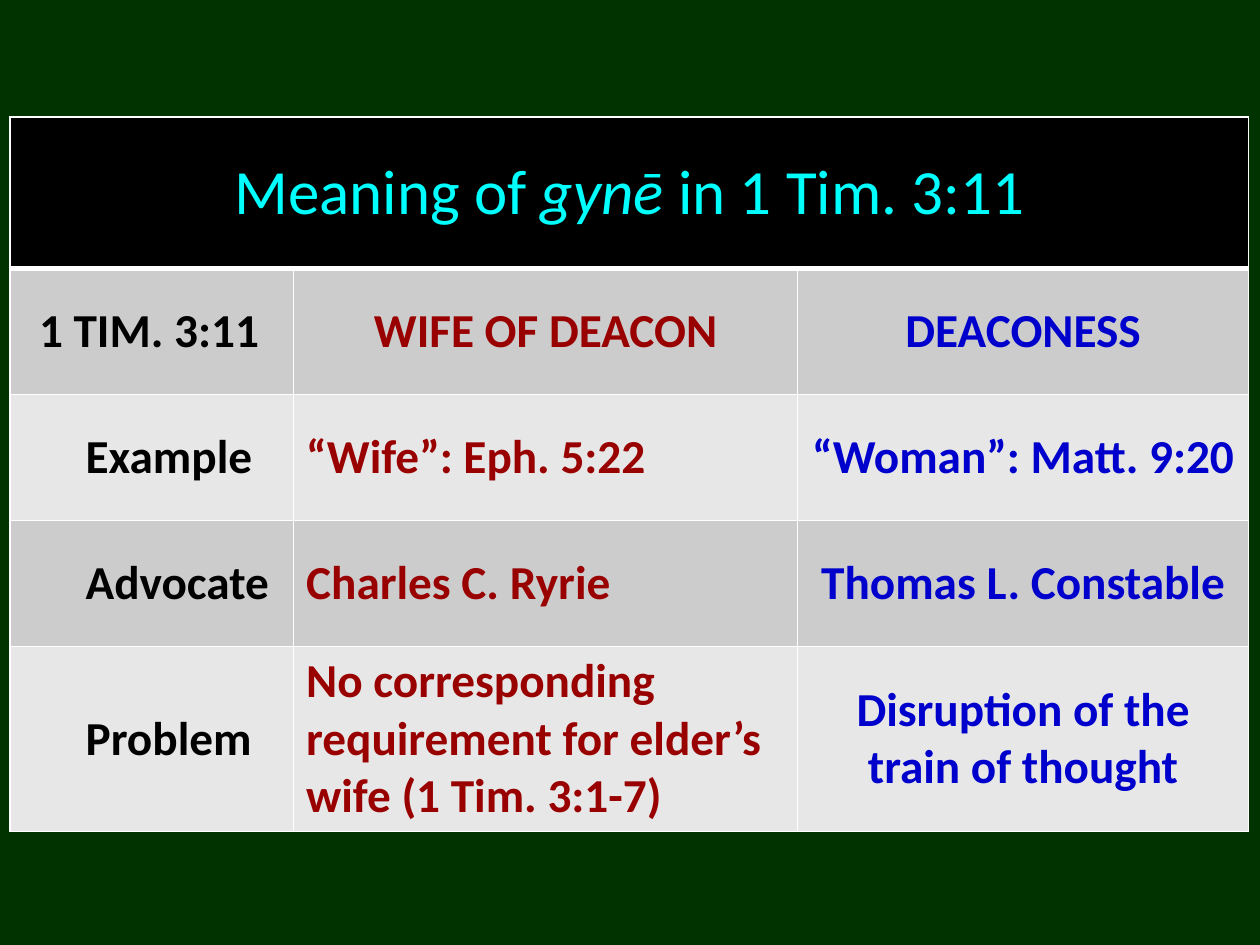
import pptx
import pptx.util
import pptx.dml.color
import pptx.enum.text
import pptx.oxml
import pptx.oxml.ns
from dataclasses import dataclass

Inches = pptx.util.Inches
Pt = pptx.util.Pt
PP_ALIGN = pptx.enum.text.PP_ALIGN


@dataclass(frozen=True)
class Theme:
    font: str = "Calibri"
    title_size: int = 36
    body_size: int = 27
    background: str = "003300"
    title_fill: str = "000000"
    title_text: str = "00FFFF"
    bands: tuple = ("CCCCCC", "E7E7E7")
    columns: tuple = ("000000", "990000", "0000CC")
    border: str = "FFFFFF"
    thin: int = 1
    thick: int = 3


THEME = Theme()
TITLE = (("Meaning of ", False), ("gynē", True), (" in 1 Tim. 3:11", False))
ROWS = (
    ("1 TIM. 3:11", "WIFE OF DEACON", "DEACONESS"),
    ("Example", "“Wife”: Eph. 5:22", "“Woman”: Matt. 9:20"),
    ("Advocate", "Charles C. Ryrie", "Thomas L. Constable"),
    ("Problem", "No corresponding requirement for elder’s wife (1 Tim. 3:1-7)",
     "Disruption of the train of thought"),
)
COLUMN_WIDTHS = (2.25, 4, 3.58)
TITLE_HEIGHT = 1.2
HEADING_INDENT, LABEL_INDENT = 0.13, 0.5


def rgb(value):
    return pptx.dml.color.RGBColor.from_string(value)


def style_run(r, size, color, bold=False, italic=False):
    r.font.name = THEME.font
    r.font.size = Pt(size)
    r.font.color.rgb = rgb(color)
    r.font.bold = bold
    r.font.italic = italic


def style_cell(cell, fill, top, bottom):
    cell.vertical_anchor = pptx.enum.text.MSO_ANCHOR.MIDDLE
    cell.fill.solid()
    cell.fill.fore_color.rgb = rgb(fill)
    tc_pr = cell._tc.get_or_add_tcPr()
    edges = (("L", THEME.thin), ("R", THEME.thin), ("T", top), ("B", bottom))
    for i, (edge, width) in enumerate(edges):
        tc_pr.insert(i, pptx.oxml.parse_xml(
            f'<a:ln{edge} {pptx.oxml.ns.nsdecls("a")} w="{Pt(width)}"><a:solidFill>'
            f'<a:srgbClr val="{THEME.border}"/></a:solidFill></a:ln{edge}>'))


def fill_title(table):
    for cell in table.rows[0].cells:
        style_cell(cell, THEME.title_fill, THEME.thin, THEME.thick)
    title = table.cell(0, 0)
    title.merge(table.cell(0, len(COLUMN_WIDTHS) - 1))
    p = title.text_frame.paragraphs[0]
    p.alignment = PP_ALIGN.CENTER
    for text, italic in TITLE:
        r = p.add_run()
        r.text = text
        style_run(r, THEME.title_size, THEME.title_text, italic=italic)


def fill_body(table):
    for row, texts in enumerate(ROWS):
        heading = row == 0
        for col, text in enumerate(texts):
            cell = table.cell(row + 1, col)
            style_cell(cell, THEME.bands[row % 2],
                       THEME.thick if heading else THEME.thin, THEME.thin)
            cell.text_frame.text = text
            p = cell.text_frame.paragraphs[0]
            style_run(p.runs[0], THEME.body_size, THEME.columns[col], bold=True)
            centered = col == 2 or (heading and col == 1)
            p.alignment = PP_ALIGN.CENTER if centered else PP_ALIGN.LEFT
            if col == 0:
                indent = HEADING_INDENT if heading else LABEL_INDENT
                p._p.get_or_add_pPr().set("marL", str(Inches(indent)))


def add_comparison(slide, left, top, width, height):
    frame = slide.shapes.add_table(len(ROWS) + 1, len(COLUMN_WIDTHS),
                                   left, top, width, height)
    table = frame.table
    for column, size in zip(table.columns, COLUMN_WIDTHS):
        column.width = int(width * size / sum(COLUMN_WIDTHS))
    title_height = Inches(TITLE_HEIGHT)
    table.rows[0].height = title_height
    for row in list(table.rows)[1:]:
        row.height = (height - title_height) // len(ROWS)
    fill_title(table)
    fill_body(table)


def main():
    prs = pptx.Presentation()
    prs.slide_width, prs.slide_height = Inches(10), Inches(7.5)
    s = prs.slides.add_slide(prs.slide_layouts[6])
    s.background.fill.solid()
    s.background.fill.fore_color.rgb = rgb(THEME.background)
    add_comparison(s, Inches(0.08), Inches(0.93), Inches(9.83), Inches(5.2))
    prs.save("out.pptx")


if __name__ == "__main__":
    main()
